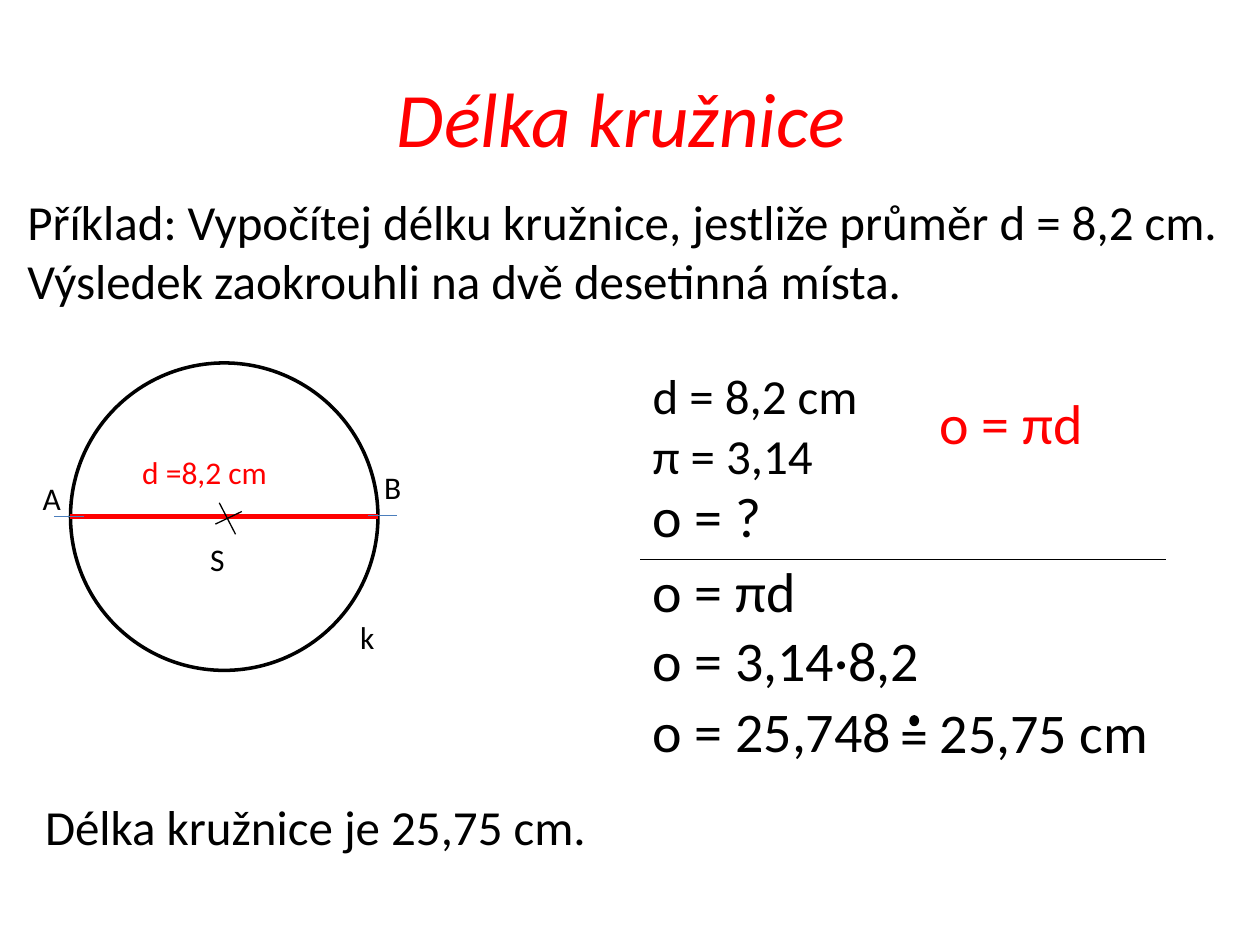
from lxml import etree
from pptx import Presentation
from pptx.dml.color import RGBColor
from pptx.enum.shapes import MSO_CONNECTOR, MSO_SHAPE
from pptx.enum.text import MSO_ANCHOR, MSO_AUTO_SIZE, PP_ALIGN
from pptx.oxml.ns import qn
from pptx.util import Pt

STRAIGHT = MSO_CONNECTOR.STRAIGHT
OVAL = MSO_SHAPE.OVAL
MIDDLE = MSO_ANCHOR.MIDDLE
FIT_SHAPE = MSO_AUTO_SIZE.SHAPE_TO_FIT_TEXT
LEFT, CENTER = PP_ALIGN.LEFT, PP_ALIGN.CENTER

BLACK, RED, BLUE = "000000", "FF0000", "4B7EBC"
SOLUTION_X = 365.8


def color(hex_value):
    return RGBColor.from_string(hex_value)


def write(tf, text, size=28, fill=BLACK, italic=False, align=LEFT):
    p = tf.paragraphs[0]
    p.alignment = align
    r = p.add_run()
    r.text = text
    r.font.name = "Calibri"
    r.font.size = Pt(size)
    r.font.italic = italic
    r.font.color.rgb = color(fill)


def add_text(shapes, text, x, y, w, h, wrap=False, **fmt):
    tf = shapes.add_textbox(Pt(x), Pt(y), Pt(w), Pt(h)).text_frame
    tf.word_wrap = wrap
    tf.auto_size = FIT_SHAPE
    write(tf, text, **fmt)


def add_line(shapes, x1, y1, x2, y2, stroke=BLACK, width=0.75):
    line = shapes.add_connector(STRAIGHT, Pt(x1), Pt(y1), Pt(x2), Pt(y2))
    line.line.color.rgb = color(stroke)
    line.line.width = Pt(width)
    etree.SubElement(line._element.spPr, qn("a:effectLst"))


def add_ellipse(shapes, x, y, w, h, fill=None):
    sp = shapes.add_shape(OVAL, Pt(x), Pt(y), Pt(w), Pt(h))
    sp.shadow.inherit = False
    sp.line.color.rgb = color(BLACK)
    sp.line.width = Pt(2)
    if fill:
        sp.fill.solid()
        sp.fill.fore_color.rgb = color(fill)
    else:
        sp.fill.background()


def add_title(s, text):
    title = s.shapes.title
    title.left, title.top, title.width, title.height = Pt(36), Pt(21.6), Pt(648), Pt(90)
    title.text_frame.vertical_anchor = MIDDLE
    write(title.text_frame, text, size=44, fill=RED, italic=True, align=CENTER)


def add_circle_diagram(shapes):
    x, y, diameter = 40.3, 207.4, 175.7
    middle = y + diameter / 2
    add_ellipse(shapes, x, y, diameter, diameter)
    add_line(shapes, x, middle, x + diameter, middle, stroke=RED, width=3)
    add_text(shapes, "d =8,2 cm", 74.2, 255.6, 97.9, 28.8, wrap=True, size=18, fill=RED)

    cross = shapes.add_group_shape().shapes
    add_line(cross, 125.3, 287.3, 134.6, 305.3)
    add_line(cross, 123.1, 299.5, 138.2, 292.3)

    add_line(shapes, 31, 295.2, 48.2, 295.2, stroke=BLUE)
    add_line(shapes, 210.2, 294.5, 226.8, 294.5, stroke=BLUE)
    for label, left, top in (("A", 17.3, 270), ("B", 212.4, 264.2),
                             ("S", 113, 305.3), ("k", 198.7, 349.9)):
        add_text(shapes, label, left, top, 22.3, 28.8, wrap=True, size=18)


def add_solution(shapes):
    for text, y, w, h, size in (
        ("d = 8,2 cm", 205.2, 133.2, 41, 28),
        ("π = 3,14", 239.8, 107.3, 41, 28),
        ("o = ?", 271.4, 77, 46.1, 32),
        ("o = πd", 314.6, 97.2, 46.1, 32),
        ("o = 3,14·8,2", 354.2, 168.5, 46.1, 32),
        ("o = 25,748", 394.6, 159.8, 46.1, 32),
    ):
        add_text(shapes, text, SOLUTION_X, y, w, h, size=size)
    add_line(shapes, SOLUTION_X, 319.7, 666, 319.7)
    add_text(shapes, "o = πd", 529.9, 218.2, 97.2, 46.1, size=32, fill=RED)

    rounded_equals = shapes.add_group_shape().shapes
    add_ellipse(rounded_equals, 520.6, 409.7, 3.6, 4.3, fill=BLACK)
    add_text(rounded_equals, "=", 507.6, 396.7, 45.4, 46.1, wrap=True, size=32)
    add_text(shapes, "25,75 cm", 529.9, 395.3, 135.4, 46.1, size=32)


def main():
    prs = Presentation()
    prs.slide_width, prs.slide_height = Pt(720), Pt(540)
    s = prs.slides.add_slide(prs.slide_layouts[5])
    add_title(s, "Délka kružnice ")
    add_text(s.shapes, "Příklad: Vypočítej délku kružnice, jestliže průměr d = 8,2 cm. "
             "Výsledek zaokrouhli na dvě desetinná místa.",
             8.6, 105.8, 697.7, 74.9, wrap=True)
    add_circle_diagram(s.shapes)
    add_solution(s.shapes)
    add_text(s.shapes, "Délka kružnice je 25,75 cm.", 18.7, 451.4, 334.1, 41)
    prs.save("out.pptx")


if __name__ == "__main__":
    main()
